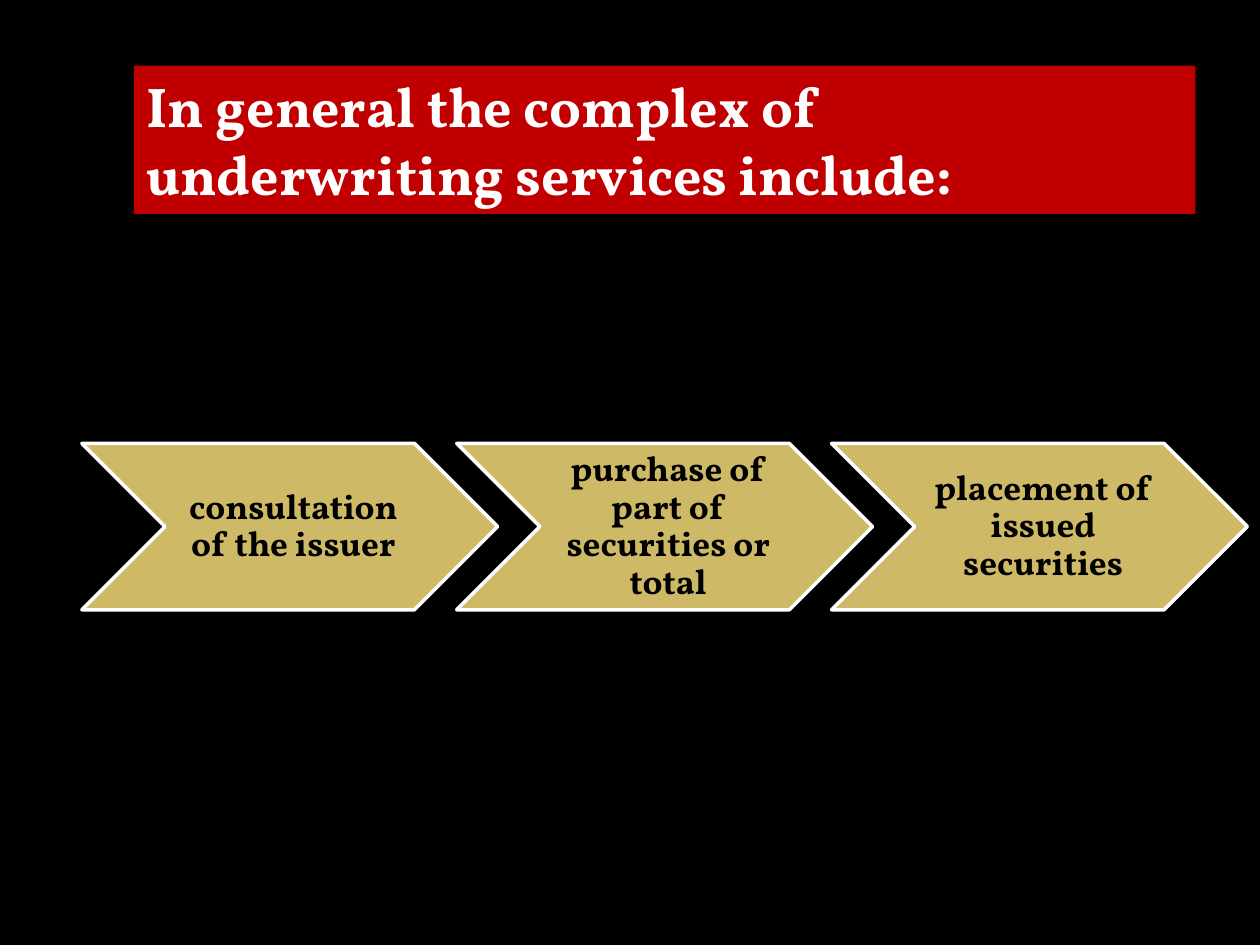
from pptx import Presentation
from pptx.dml.color import RGBColor
from pptx.enum.shapes import MSO_SHAPE as Shape
from pptx.enum.text import MSO_ANCHOR as Anchor, MSO_AUTO_SIZE as AutoSize, PP_ALIGN as Align
from pptx.util import Pt

BLACK = RGBColor(0x00, 0x00, 0x00)
WHITE = RGBColor(0xFF, 0xFF, 0xFF)
RED = RGBColor(0xC0, 0x00, 0x00)
GOLD = RGBColor(0xCE, 0xB9, 0x66)

STEPS = [
    "consultation of the issuer",
    "purchase of part of securities or total",
    "placement of issued securities",
]
STEP_LEFT, STEP_TOP, STEP_PITCH = 46.8, 253.4, 214.2
STEP_WIDTH, STEP_HEIGHT = 237.6, 95.04


class Deck:
    font = "Vollkorn"

    def __init__(self, s):
        self.s = s
        fill = s.background.fill
        fill.solid()
        fill.fore_color.rgb = BLACK

    def shape(self, kind, x, y, w, h, color):
        sp = self.s.shapes.add_shape(kind, Pt(x), Pt(y), Pt(w), Pt(h))
        sp.shadow.inherit = False
        sp.fill.solid()
        sp.fill.fore_color.rgb = color
        sp.line.fill.background()
        return sp

    def set_text(self, tf, text, size, color, align):
        tf.word_wrap = True
        tf.text = text
        p = tf.paragraphs[0]
        p.alignment = align
        font = p.runs[0].font
        font.name, font.size, font.bold = self.font, Pt(size), True
        font.color.rgb = color
        return p

    def title(self, text, x, y, w, h):
        tf = self.shape(Shape.RECTANGLE, x, y, w, h, RED).text_frame
        self.set_text(tf, text, 32, WHITE, Align.LEFT)
        tf.vertical_anchor = Anchor.TOP
        tf.auto_size = AutoSize.SHAPE_TO_FIT_TEXT

    def step(self, text, x, y, w, h):
        """Draw a chevron with its label between the notch and the point."""
        line = self.shape(Shape.CHEVRON, x, y, w, h, GOLD).line
        line.color.rgb = WHITE
        line.width = Pt(2)
        label = self.s.shapes.add_textbox(Pt(x + h / 2), Pt(y), Pt(w - h), Pt(h))
        tf = label.text_frame
        tf.margin_left = Pt(6.3)
        tf.margin_top = tf.margin_right = tf.margin_bottom = Pt(2.1)
        tf.vertical_anchor = Anchor.MIDDLE
        self.set_text(tf, text, 20, BLACK, Align.CENTER).line_spacing = 0.9


def main():
    prs = Presentation()
    prs.slide_width, prs.slide_height = Pt(720), Pt(540)
    deck = Deck(prs.slides.add_slide(prs.slide_layouts[6]))
    deck.title("In general the complex of underwriting services include:",
               76.5, 37.5, 606.6, 84.8)
    for i, text in enumerate(STEPS):
        deck.step(text, STEP_LEFT + i * STEP_PITCH, STEP_TOP, STEP_WIDTH, STEP_HEIGHT)
    prs.save("out.pptx")


if __name__ == "__main__":
    main()
